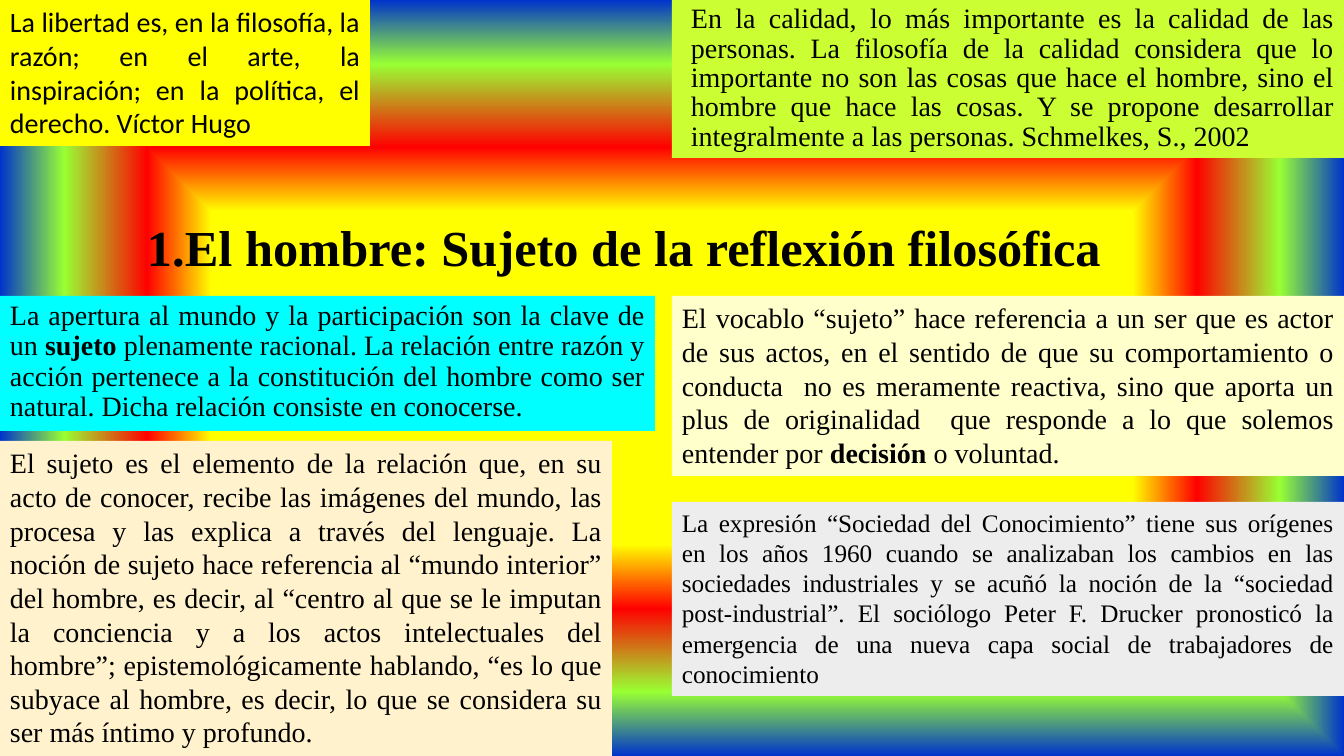
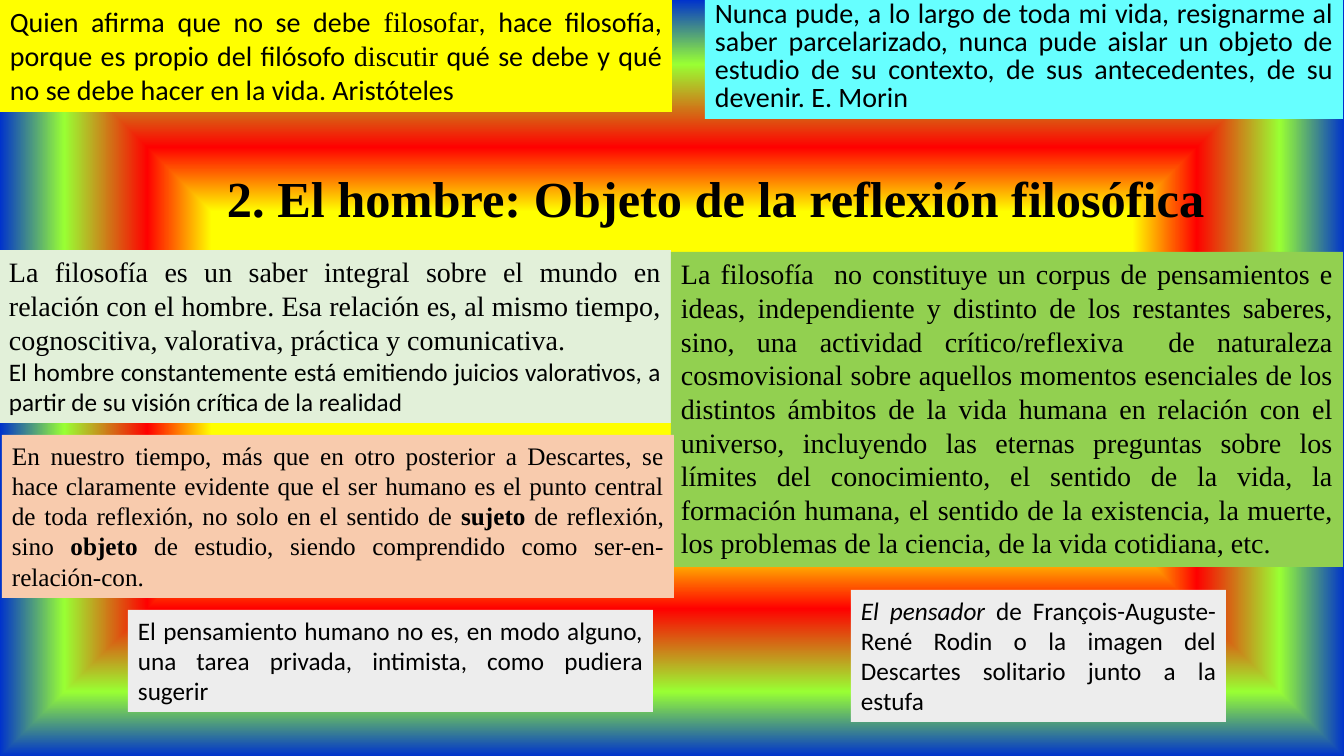
from lxml import etree
from pptx import Presentation
from pptx import util as u
from pptx.dml.color import RGBColor
from pptx.enum import shapes, text
from pptx.oxml import parse_xml
from pptx.oxml.ns import nsdecls, qn

WIDTH, HEIGHT = 1344, 756
PX = 12192000 / WIDTH

SERIF, SANS = "Times New Roman", "Calibri"
BLACK = RGBColor(0x00, 0x00, 0x00)
YELLOW = RGBColor(0xFF, 0xFF, 0x00)
LIME = RGBColor(0xCC, 0xFF, 0x33)
CYAN = RGBColor(0x00, 0xFF, 0xFF)
CREAM = RGBColor(0xFF, 0xFF, 0xCC)
SAND = RGBColor(0xFF, 0xF2, 0xCC)
GREY = RGBColor(0xED, 0xED, 0xED)
MINT = RGBColor(0xE2, 0xF0, 0xD9)
GREEN = RGBColor(0x92, 0xD0, 0x50)
SALMON = RGBColor(0xF8, 0xCB, 0xAD)
AQUA = RGBColor(0x66, 0xFF, 0xFF)
RED = RGBColor(0xFF, 0x00, 0x00)
LEAF = RGBColor(0x99, 0xFF, 0x33)
BLUE = RGBColor(0x00, 0x33, 0xCC)
RAINBOW = [(44, YELLOW), (61, RED), (83, LEAF), (100, BLUE)]

BOLD, ITALIC = {"bold": True}, {"italic": True}
IN_SERIF = {"name": SERIF}

# Title: box, wording, first number, level, left indent, hanging, alignment, space after
# Panel: box, fill, size, font, line spacing, left indent, paragraphs of (words, changes)
SLIDES = [
    (
        ((137, 181, 984, 102), "El hombre: Sujeto de la reflexión filosófica",
         1, 0, 38, 38, text.PP_ALIGN.JUSTIFY, 35.2),
        [
            ((0, 0, 370, 146), YELLOW, 20, SANS, None, 0, [[
                ("La libertad es, en la filosofía, la razón; en el arte, la inspiración; "
                 "en la política, el derecho. Víctor Hugo", {})]]),
            ((672, 0, 672, 158), LIME, 20, SERIF, 21, 9, [[
                ("En la calidad, lo más importante es la calidad de las personas. La filosofía "
                 "de la calidad considera que lo importante no son las cosas que hace el hombre, "
                 "sino el hombre que hace las cosas. Y se propone desarrollar integralmente a las "
                 "personas. Schmelkes, S., 2002", {})]]),
            ((0, 296, 655, 135), CYAN, 20, SERIF, 21.6, 0, [[
                ("La apertura al mundo y la participación son la clave de un ", {}),
                ("sujeto", BOLD),
                (" plenamente racional. La relación entre razón y acción pertenece a la "
                 "constitución del hombre como ser natural. Dicha relación consiste en "
                 "conocerse.", {})]]),
            ((672, 296, 672, 180), CREAM, 20, SERIF, None, 0, [[
                ("El vocablo “sujeto” hace referencia a un ser que es actor de sus actos, en el "
                 "sentido de que su comportamiento o conducta  no es meramente reactiva, sino que "
                 "aporta un plus de originalidad  que responde a lo que solemos entender por ", {}),
                ("decisión ", BOLD),
                ("o voluntad. ", {})]]),
            ((0, 441, 612, 315), SAND, 20, SERIF, None, 0, [[
                ("El sujeto es el elemento de la relación que, en su acto de conocer, recibe las "
                 "imágenes del mundo, las procesa y las explica a través del lenguaje. La noción "
                 "de sujeto hace referencia al “mundo interior” del hombre, es decir, al “centro "
                 "al que se le imputan la conciencia y a los actos intelectuales del hombre”; "
                 "epistemológicamente hablando, “es lo que subyace al hombre, es decir, lo que se "
                 "considera su ser más íntimo y profundo.", {})]]),
            ((672, 502, 672, 194), GREY, 18, SERIF, None, 0, [[
                ("La expresión “Sociedad del Conocimiento” tiene sus orígenes en los años 1960 "
                 "cuando se analizaban los cambios en las sociedades industriales y se acuñó la "
                 "noción de la “sociedad post-industrial”. El sociólogo Peter F. Drucker "
                 "pronosticó la emergencia de una nueva capa social de trabajadores de "
                 "conocimiento ", {})]]),
        ],
    ),
    (
        ((116, 132, 1110, 102), " El hombre: Objeto de la reflexión filosófica",
         2, 2, 126, 25, text.PP_ALIGN.LEFT, 0),
        [
            ((0, 0, 672, 112), YELLOW, 20, SANS, None, 0, [[
                ("Quien afirma que no se debe ", {}),
                ("filosofar", IN_SERIF),
                (", hace filosofía, porque es propio del filósofo ", {}),
                ("discutir", IN_SERIF),
                (" qué se debe y qué no se debe hacer en la vida. Aristóteles", {})]]),
            ((-1, 250, 672, 173), MINT, 20, SERIF, None, 0, [
                [("La filosofía es un saber integral sobre el mundo en relación con el hombre. "
                  "Esa relación es, al mismo tiempo, cognoscitiva, valorativa, práctica y "
                  "comunicativa.", {})],
                [("El hombre constantemente está emitiendo juicios valorativos, a partir de su "
                  "visión crítica de la realidad", {"name": SANS, "size": u.Pt(18)})]]),
            ((671, 252, 672, 315), GREEN, 20, SERIF, None, 0, [[
                ("La filosofía  no constituye un corpus de pensamientos e ideas, independiente y "
                 "distinto de los restantes saberes, sino, una actividad crítico/reflexiva  de "
                 "naturaleza cosmovisional sobre aquellos momentos esenciales de los distintos "
                 "ámbitos de la vida humana en relación con el universo, incluyendo las eternas "
                 "preguntas sobre los límites del conocimiento, el sentido de la vida, la "
                 "formación humana, el sentido de la existencia, la muerte, los problemas de la "
                 "ciencia, de la vida cotidiana, etc.", {})]]),
            ((2, 435, 672, 163), SALMON, 18, SERIF, None, 0, [[
                ("En nuestro tiempo, más que en otro posterior a Descartes, se hace claramente "
                 "evidente que el ser humano es el punto central de toda reflexión, no solo en el "
                 "sentido de ", {}),
                ("sujeto ", BOLD),
                ("de reflexión, sino ", {}),
                ("objeto", BOLD),
                (" de estudio, siendo comprendido como ser-en-relación-con. ", {})]]),
            ((128, 610, 525, 102), GREY, 18, SANS, None, 0, [[
                ("El pensamiento humano no es, en modo alguno, una tarea privada, intimista, como "
                 "pudiera sugerir ", {})]]),
            ((851, 590, 375, 132), GREY, 18, SANS, None, 0, [[
                ("El pensador", ITALIC),
                (" de François-Auguste-René Rodin o la imagen del Descartes solitario junto a la "
                 "estufa", {})]]),
            ((705, -4, 638, 123), AQUA, 20, SANS, 20, 0, [[
                ("Nunca pude, a lo largo de toda mi vida, resignarme al saber parcelarizado, nunca "
                 "pude aislar un objeto de estudio de su contexto, de sus antecedentes, de su "
                 "devenir. E. Morin", {})]]),
        ],
    ),
]


def emu(*lengths):
    return [round(length * PX) for length in lengths]


def set_font(run, name, size, **changes):
    run.font.color.rgb = BLACK
    for key, value in {"name": name, "size": u.Pt(size), **changes}.items():
        setattr(run.font, key, value)


prs = Presentation()
prs.slide_width, prs.slide_height = emu(WIDTH, HEIGHT)

stops = "".join(f'<a:gs pos="{percent * 1000}"><a:srgbClr val="{color}"/></a:gs>'
                for percent, color in RAINBOW)
gradient = (f'<a:gradFill {nsdecls("a")} rotWithShape="1"><a:gsLst>{stops}</a:gsLst>'
            '<a:path path="rect"><a:fillToRect l="50000" t="50000" r="50000" b="50000"/>'
            '</a:path></a:gradFill>')

for title, panels in SLIDES:
    slide = prs.slides.add_slide(prs.slide_layouts[6])
    slide.background.fill.solid()
    plain_fill = slide.element.find(".//" + qn("p:bgPr") + "/" + qn("a:solidFill"))
    plain_fill.getparent().replace(plain_fill, parse_xml(gradient))

    box, wording, number, level, indent, hanging, alignment, space_after = title
    heading = slide.shapes.add_textbox(*emu(*box)).text_frame
    heading.word_wrap = False
    heading.auto_size = text.MSO_AUTO_SIZE.SHAPE_TO_FIT_TEXT
    heading.text = wording
    line = heading.paragraphs[0]
    line.level = level
    line.alignment = alignment
    line.line_spacing = 1.5
    line.space_after = u.Pt(space_after)
    set_font(line.runs[0], SERIF, 36, bold=True)
    properties = line._p.get_or_add_pPr()
    margin, hang = emu(indent, hanging)
    properties.set("marL", str(margin))
    properties.set("indent", str(-hang))
    etree.SubElement(properties, qn("a:buFont")).set("typeface", "+mj-lt")
    numbering = etree.SubElement(properties, qn("a:buAutoNum"))
    numbering.set("type", "arabicPeriod")
    numbering.set("startAt", str(number))

    for box, fill, size, font, spacing, indent, paragraphs in panels:
        panel = slide.shapes.add_shape(shapes.MSO_SHAPE.RECTANGLE, *emu(*box))
        panel.shadow.inherit = False
        panel.fill.solid()
        panel.fill.fore_color.rgb = fill
        panel.line.fill.background()
        frame = panel.text_frame
        frame.word_wrap = True
        frame.auto_size = text.MSO_AUTO_SIZE.SHAPE_TO_FIT_TEXT
        frame.vertical_anchor = text.MSO_ANCHOR.TOP
        for index, pieces in enumerate(paragraphs):
            paragraph = frame.add_paragraph() if index else frame.paragraphs[0]
            paragraph.alignment = text.PP_ALIGN.JUSTIFY
            if spacing:
                paragraph.line_spacing = u.Pt(spacing)
            if indent:
                paragraph._p.get_or_add_pPr().set("marL", str(emu(indent)[0]))
            for words, changes in pieces:
                run = paragraph.add_run()
                run.text = words
                set_font(run, **{"name": font, "size": size} if not changes else
                         {"name": font, "size": size})
                for key, value in changes.items():
                    setattr(run.font, key, value)

prs.save("out.pptx")
